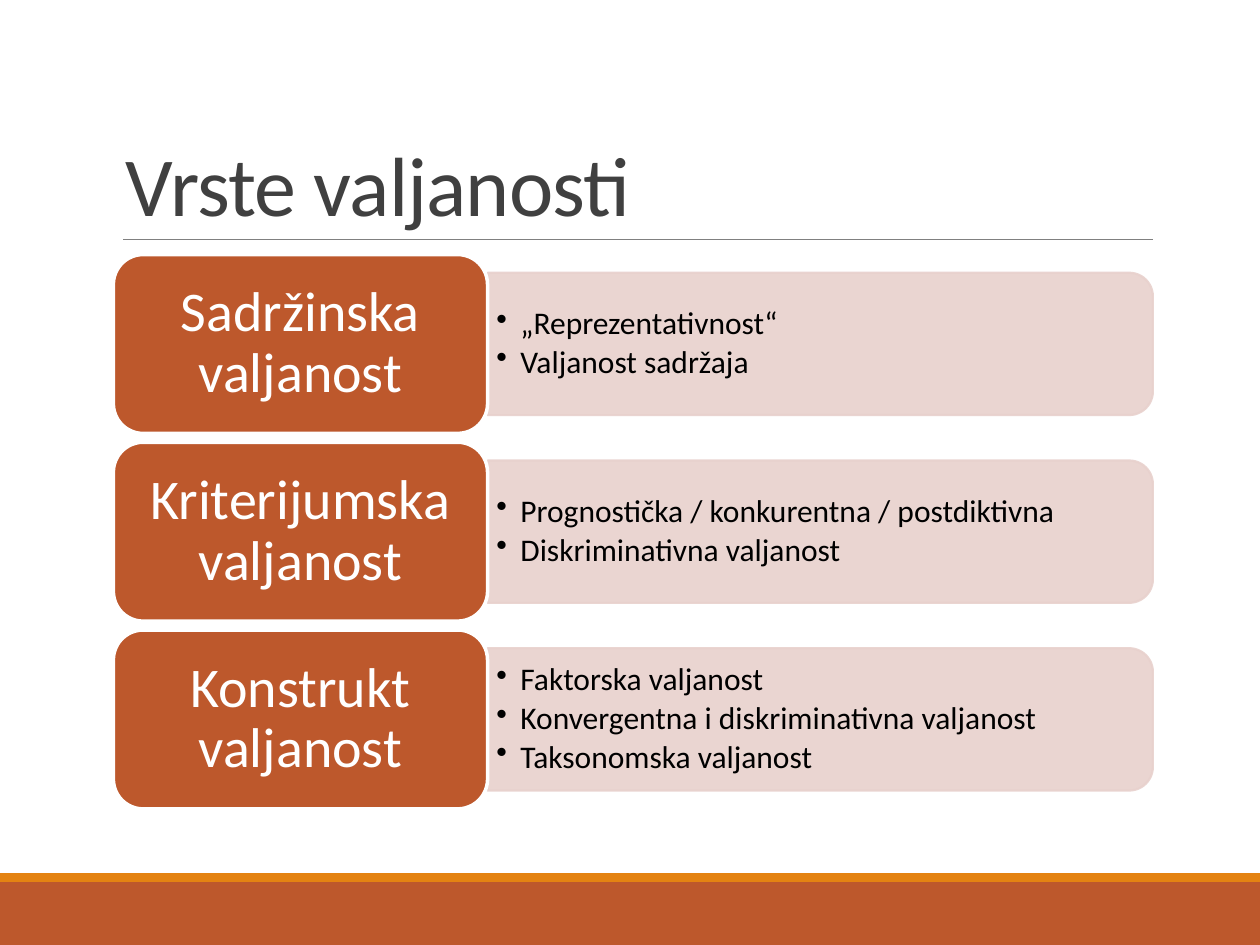
from dataclasses import dataclass

from lxml import etree
from pptx import Presentation
from pptx.dml.color import RGBColor
from pptx.enum import shapes, text
from pptx.oxml.ns import qn
from pptx.util import Inches, Pt

COLORS = {
    "rust": "BD582C", "orange": "E48312", "rule": "808080", "panel": "E8D1CD",
    "title": "404040", "white": "FFFFFF", "black": "000000",
}
FONT = "Calibri"
LEFT, TOP, PITCH = 0.9, 2.02, 1.49
LABEL_WIDTH, LABEL_HEIGHT = 2.97, 1.42
PANEL_WIDTH, PANEL_HEIGHT = 5.28, 1.13


@dataclass
class ValidityType:
    label: str
    points: list[str]


@dataclass
class TextStyle:
    size: float
    color: str
    line_spacing: float = 0.9
    space_after: float = 0
    align: text.PP_ALIGN = text.PP_ALIGN.LEFT
    anchor: text.MSO_ANCHOR = text.MSO_ANCHOR.MIDDLE
    insets: tuple[float, float] = (0.1, 0.05)
    bulleted: bool = False
    tracking: int = 0


TITLE = TextStyle(48, "title", 0.85, anchor=text.MSO_ANCHOR.BOTTOM, tracking=-50)
LABEL = TextStyle(32, "white", space_after=11.2, align=text.PP_ALIGN.CENTER, insets=(0.13, 0.07))
POINTS = TextStyle(18, "black", space_after=2.7, insets=(0.07, 0.04), bulleted=True)

ROWS = [
    ValidityType("Sadržinska valjanost", ["„Reprezentativnost“", "Valjanost sadržaja"]),
    ValidityType("Kriterijumska valjanost",
                 ["Prognostička / konkurentna / postdiktivna", "Diskriminativna valjanost"]),
    ValidityType("Konstrukt valjanost",
                 ["Faktorska valjanost", "Konvergentna i diskriminativna valjanost",
                  "Taksonomska valjanost"]),
]


def rgb(name: str) -> RGBColor:
    return RGBColor.from_string(COLORS[name])


def add_block(slide, kind, box: tuple, fill: str, line: str = "", width: float = 0):
    shape = slide.shapes.add_shape(kind, *map(Inches, box))
    shape.shadow.inherit = False
    shape.fill.solid()
    shape.fill.fore_color.rgb = rgb(fill)
    if line:
        shape.line.color.rgb = rgb(line)
        shape.line.width = Pt(width)
    else:
        shape.line.fill.background()
    return shape


def add_text(slide, box: tuple, lines: list[str], style: TextStyle) -> None:
    frame = slide.shapes.add_textbox(*map(Inches, box)).text_frame
    frame.word_wrap = True
    frame.vertical_anchor = style.anchor
    frame.margin_left = frame.margin_right = Inches(style.insets[0])
    frame.margin_top = frame.margin_bottom = Inches(style.insets[1])
    for index, line in enumerate(lines):
        paragraph = frame.add_paragraph() if index else frame.paragraphs[0]
        paragraph.alignment = style.align
        paragraph.line_spacing = style.line_spacing
        paragraph.space_after = Pt(style.space_after)
        if style.bulleted:
            paragraph.level = 1
            properties = paragraph._p.get_or_add_pPr()
            properties.set("marL", str(Inches(0.19)))
            properties.set("indent", str(Inches(-0.19)))
            etree.SubElement(properties, qn("a:buChar")).set("char", "•")
        run = paragraph.add_run()
        run.text = line
        run.font.name = FONT
        run.font.size = Pt(style.size)
        run.font.color.rgb = rgb(style.color)
        if style.tracking:
            run._r.get_or_add_rPr().set("spc", str(style.tracking))


def add_rule(slide, left: float, right: float, top: float) -> None:
    rule = slide.shapes.add_connector(
        shapes.MSO_CONNECTOR.STRAIGHT, *map(Inches, (left, top, right, top)))
    rule.line.color.rgb = rgb("rule")
    rule.line.width = Pt(0.5)
    etree.SubElement(rule._element.spPr, qn("a:effectLst"))


def add_row(slide, row: ValidityType, top: float) -> None:
    panel_left = LEFT + LABEL_WIDTH
    middle = top + LABEL_HEIGHT / 2
    panel_box = (panel_left + (PANEL_WIDTH - PANEL_HEIGHT) / 2, middle - PANEL_WIDTH / 2,
                 PANEL_HEIGHT, PANEL_WIDTH)
    panel = add_block(slide, shapes.MSO_SHAPE.ROUND_2_SAME_RECTANGLE, panel_box,
                      "panel", "panel", 1.25)
    panel.rotation = 90
    for color in panel._element.spPr.iter(qn("a:srgbClr")):
        etree.SubElement(color, qn("a:alpha")).set("val", "90000")
    add_text(slide, (panel_left, middle - 0.51, 5.22, 1.02), row.points, POINTS)
    add_block(slide, shapes.MSO_SHAPE.ROUNDED_RECTANGLE,
              (LEFT, top, LABEL_WIDTH, LABEL_HEIGHT), "rust", "white", 2)
    add_text(slide, (LEFT + 0.07, top + 0.07, LABEL_WIDTH - 0.14, LABEL_HEIGHT - 0.14),
             [row.label], LABEL)


def main() -> None:
    """Build the slide on the types of validity."""
    presentation = Presentation()
    presentation.slide_width, presentation.slide_height = Inches(10), Inches(7.5)
    slide = presentation.slides.add_slide(presentation.slide_layouts[6])
    add_block(slide, shapes.MSO_SHAPE.RECTANGLE, (0, 7, 10, 0.5), "rust")
    add_block(slide, shapes.MSO_SHAPE.RECTANGLE, (0, 6.93, 10, 0.07), "orange")
    add_rule(slide, 0.98, 9.15, 1.9)
    for index, row in enumerate(ROWS):
        add_row(slide, row, TOP + index * PITCH)
    add_text(slide, (LEFT, 0.31, 8.25, 1.59), ["Vrste valjanosti"], TITLE)
    presentation.save("out.pptx")


if __name__ == "__main__":
    main()
